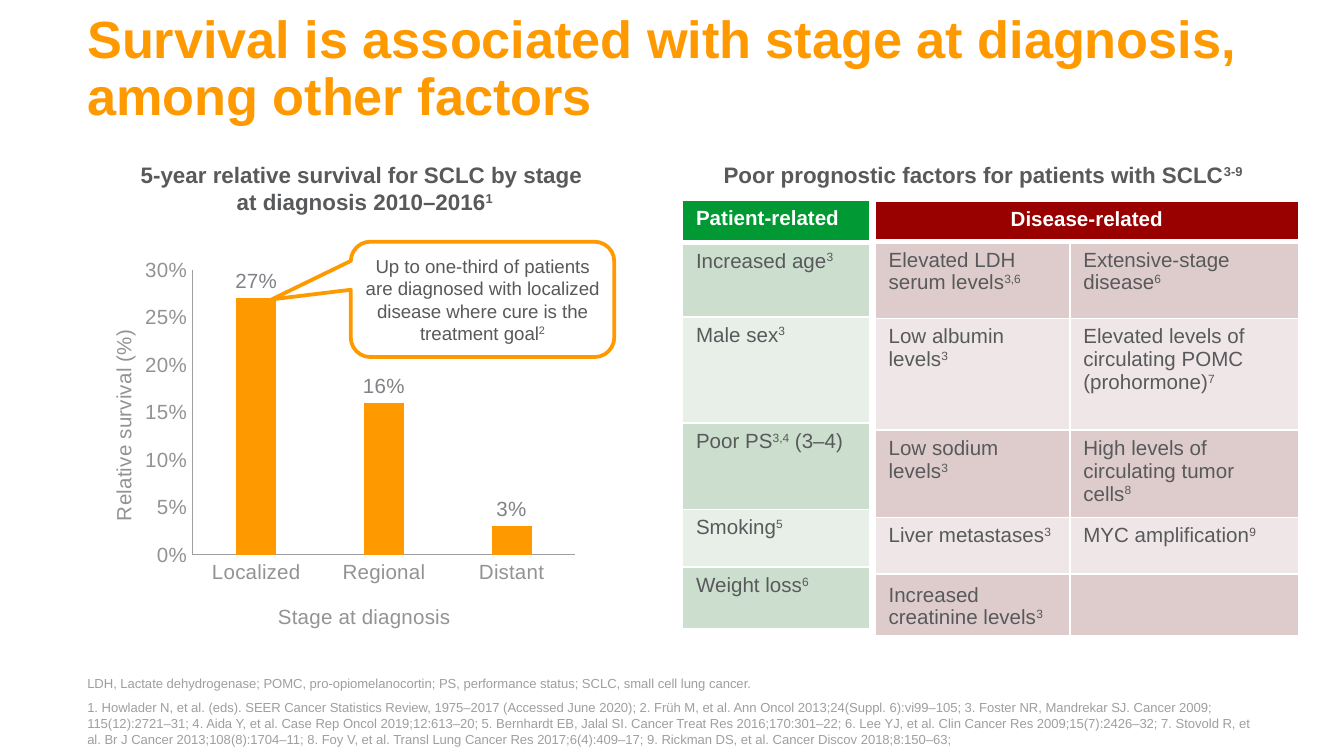
"""Build a slide on survival by stage and prognostic factors in SCLC."""
from lxml import etree
from pptx import Presentation
from pptx import util as u
from pptx.chart.data import CategoryChartData
from pptx.dml.color import RGBColor
from pptx.enum import chart as ch, shapes, text
from pptx.oxml import parse_xml
from pptx.oxml.ns import nsdecls, qn

ORANGE = RGBColor(0xFF, 0x99, 0x00)
DARK = RGBColor(0x58, 0x59, 0x5B)
LABEL = RGBColor(0x81, 0x82, 0x85)
AXIS = RGBColor(0x92, 0x93, 0x95)
PALE = RGBColor(0x9E, 0x9F, 0xA2)
WHITE = RGBColor(0xFF, 0xFF, 0xFF)
RED = RGBColor(0x99, 0x00, 0x00)
RED_BANDS = RGBColor(0xDE, 0xCC, 0xCC), RGBColor(0xEF, 0xE7, 0xE7)
GREEN = RGBColor(0x00, 0x99, 0x33)
GREEN_BANDS = RGBColor(0xCC, 0xDE, 0xCE), RGBColor(0xE7, 0xEF, 0xE8)

REFERENCES = (
    "1. Howlader N, et al. (eds). SEER Cancer Statistics Review, 1975–2017 (Accessed June 2020); "
    "2. Früh M, et al. Ann Oncol 2013;24(Suppl. 6):vi99–105; "
    "3. Foster NR, Mandrekar SJ. Cancer 2009; 115(12):2721–31; "
    "4. Aida Y, et al. Case Rep Oncol 2019;12:613–20; "
    "5. Bernhardt EB, Jalal SI. Cancer Treat Res 2016;170:301–22; "
    "6. Lee YJ, et al. Clin Cancer Res 2009;15(7):2426–32; "
    "7. Stovold R, et al. Br J Cancer 2013;108(8):1704–11; "
    "8. Foy V, et al. Transl Lung Cancer Res 2017;6(4):409–17; "
    "9. Rickman DS, et al. Cancer Discov 2018;8:150–63;")
ABBREVIATIONS = ("LDH, Lactate dehydrogenase; POMC, pro-opiomelanocortin; "
                 "PS, performance status; SCLC, small cell lung cancer.")
DISEASE = [
    ["Disease-related", ""],
    ["Elevated LDH serum levels^3,6", "Extensive-stage disease^6"],
    ["Low albumin levels^3", "Elevated levels of circulating POMC (prohormone)^7"],
    ["Low sodium levels^3", "High levels of circulating tumor cells^8"],
    ["Liver metastases^3", "MYC amplification^9"],
    ["Increased creatinine levels^3", ""],
]
PATIENT = [["Patient-related"], ["Increased age^3"], ["Male sex^3"],
           ["Poor PS^3,4^ (3–4)"], ["Smoking^5"], ["Weight loss^6"]]


def style_font(font, size, color, bold=False):
    """Apply the slide's typeface with a size, colour and weight."""
    font.name, font.size, font.bold = "Arial", u.Pt(size), bold
    font.color.rgb = color


def write(tf, marked, size, color, bold=False, align=text.PP_ALIGN.LEFT):
    """Write one paragraph, raising every second part between carets."""
    p = tf.paragraphs[0]
    first, *rest = marked.split("^")
    p.text = first
    for i, part in enumerate(rest):
        r = p.add_run()
        r.text = part
        if i % 2 == 0:
            r.font._element.set("baseline", "30000")
    p.alignment = align
    style_font(p.font, size, color, bold)
    return p


def set_frame(tf, margin, anchor=text.MSO_ANCHOR.TOP):
    """Set wrapping, equal margins and the anchor of a text frame."""
    tf.word_wrap = True
    tf.auto_size = text.MSO_AUTO_SIZE.NONE
    tf.vertical_anchor = anchor
    tf.margin_left = tf.margin_top = tf.margin_right = tf.margin_bottom = u.Cm(margin)


def add_title(slide, words, box):
    """Place and fill the title placeholder."""
    sp = slide.shapes.title
    sp.left, sp.top, sp.width, sp.height = map(u.Cm, box)
    set_frame(sp.text_frame, 0, text.MSO_ANCHOR.BOTTOM)
    write(sp.text_frame, words, 28, ORANGE, True).line_spacing = 0.9


def add_text(slide, words, box, size, color, margin=0, anchor=text.MSO_ANCHOR.TOP, **look):
    """Add a wrapped text box."""
    sp = slide.shapes.add_textbox(*map(u.Cm, box))
    set_frame(sp.text_frame, margin, anchor)
    write(sp.text_frame, words, size, color, **look)


def add_callout(slide, words, box):
    """Add the outlined speech bubble pointing at the first column."""
    sp = slide.shapes.add_shape(shapes.MSO_SHAPE.ROUNDED_RECTANGULAR_CALLOUT, *map(u.Cm, box))
    for i, value in enumerate((-0.8, 0, 0.17)):
        sp.adjustments[i] = value
    sp.shadow.inherit = False
    sp.fill.background()
    sp.line.color.rgb = ORANGE
    sp.line.width = u.Pt(2)
    set_frame(sp.text_frame, 0.13, text.MSO_ANCHOR.MIDDLE)
    write(sp.text_frame, words, 10, DARK, align=text.PP_ALIGN.CENTER)


def set_borders(cell, bottom):
    """Draw white cell borders with a given bottom width in points."""
    tc_pr = cell._tc.get_or_add_tcPr()
    for side, width in zip("LRTB", (1, 1, 1, bottom)):
        ln = etree.SubElement(tc_pr, qn(f"a:ln{side}"), w=str(u.Pt(width)))
        fill = etree.SubElement(ln, qn("a:solidFill"))
        etree.SubElement(fill, qn("a:srgbClr"), val=str(WHITE))


def add_factor_table(slide, rows, left, top, widths, heights, head, bands):
    """Add a table with one header row and alternating body rows."""
    frame = slide.shapes.add_table(len(rows), len(widths), u.Cm(left), u.Cm(top),
                                   u.Cm(sum(widths)), u.Cm(sum(heights)))
    table = frame.table
    table.first_row = table.horz_banding = False
    for column, width in zip(table.columns, widths):
        column.width = u.Cm(width)
    for i, (row, height) in enumerate(zip(rows, heights)):
        table.rows[i].height = u.Cm(height)
        for j, words in enumerate(row):
            cell = table.cell(i, j)
            set_borders(cell, 1 if i else 3)
            cell.fill.solid()
            cell.fill.fore_color.rgb = bands[(i - 1) % 2] if i else head
            write(cell.text_frame, words, 11, DARK if i else WHITE, bold=not i)
    return table


def set_layout(parent, position, **values):
    """Give a chart part a manual layout in fractions of the chart."""
    for old in parent.findall(qn("c:layout")):
        parent.remove(old)
    inner = '<c:layoutTarget val="inner"/>' if "w" in values else ""
    modes = '<c:xMode val="edge"/><c:yMode val="edge"/>'
    sizes = "".join(f'<c:{k} val="{v}"/>' for k, v in values.items())
    parent.insert(position, parse_xml(
        f'<c:layout {nsdecls("c")}><c:manualLayout>{inner}{modes}{sizes}</c:manualLayout></c:layout>'))


def style_axis(axis, title, x, y):
    """Format an axis and place its title."""
    axis.has_major_gridlines = False
    axis.major_tick_mark = axis.minor_tick_mark = ch.XL_TICK_MARK.NONE
    axis.format.line.color.rgb = PALE
    axis.format.line.width = u.Pt(0.75)
    style_font(axis.tick_labels.font, 11, AXIS)
    write(axis.axis_title.text_frame, title, 11, AXIS, align=text.PP_ALIGN.CENTER)
    set_layout(axis.axis_title._element, 1, x=x, y=y)


def add_survival_chart(slide, box):
    """Add the column chart of survival by stage."""
    data = CategoryChartData(number_format="0%")
    data.categories = ["Localized", "Regional", "Distant"]
    data.add_series("Series 1", (0.27, 0.16, 0.03))
    chart = slide.shapes.add_chart(ch.XL_CHART_TYPE.COLUMN_CLUSTERED, *map(u.Cm, box), data).chart
    chart.has_legend = chart.has_title = False
    style_font(chart.font, 10, DARK)
    style_axis(chart.category_axis, "Stage at diagnosis", 0.39, 0.87)
    axis = chart.value_axis
    style_axis(axis, "Relative survival (%)", 0.06, 0.19)
    axis.minimum_scale, axis.maximum_scale, axis.major_unit = 0, 0.3, 0.05
    axis.tick_labels.number_format = "0%"
    axis.tick_labels.number_format_is_linked = False
    plot = chart.plots[0]
    plot.gap_width, plot.overlap, plot.vary_by_categories = 219, -27, False
    series = plot.series[0]
    series.format.fill.solid()
    series.format.fill.fore_color.rgb = ORANGE
    labels = series.data_labels
    labels.show_value = True
    labels.position = ch.XL_LABEL_POSITION.OUTSIDE_END
    labels.number_format, labels.number_format_is_linked = "0%", False
    style_font(labels.font, 11, LABEL)
    set_layout(chart._chartSpace.chart.plotArea, 0, x=0.23, y=0.05, w=0.75, h=0.71)


def main():
    """Build and save the slide."""
    prs = Presentation()
    prs.slide_width, prs.slide_height = u.Cm(25.4), u.Cm(14.29)
    slide = prs.slides.add_slide(prs.slide_layouts[5])
    center = text.PP_ALIGN.CENTER
    add_title(slide, "Survival is associated with stage at diagnosis, among other factors",
              (1.65, 0.76, 22.48, 1.63))
    add_text(slide, REFERENCES, (1.65, 13.23, 22.15, 1.02), 7, PALE)
    add_text(slide, ABBREVIATIONS, (1.65, 12.22, 21.51, 0.84), 7, PALE,
             anchor=text.MSO_ANCHOR.BOTTOM)
    for words, box in (
            ("5-year relative survival for SCLC by stage \nat diagnosis 2010–2016^1",
             (1.47, 2.92, 10.85, 1.27)),
            ("Poor prognostic factors for patients with SCLC^3-9", (13.26, 2.92, 10.64, 0.76))):
        add_text(slide, words, box, 12, DARK, 0.13, bold=True, align=center)
    disease = add_factor_table(slide, DISEASE, 16.54, 3.81, (3.68, 4.32),
                               (0.76, 1.45, 2.11, 1.65, 1.07, 1.17), RED, RED_BANDS)
    disease.cell(0, 0).merge(disease.cell(0, 1))
    disease.cell(0, 0).text_frame.paragraphs[0].alignment = center
    disease.cell(5, 0).vertical_anchor = text.MSO_ANCHOR.BOTTOM
    add_survival_chart(slide, (1.42, 4.72, 9.65, 7.59))
    add_callout(slide, "Up to one-third of patients are diagnosed with localized disease "
                "where cure is the treatment goal^2", (6.63, 4.57, 4.98, 2.18))
    add_factor_table(slide, PATIENT, 12.9, 3.78, (3.53,),
                     (0.81, 1.4, 2.01, 1.63, 1.09, 1.17), GREEN, GREEN_BANDS)
    prs.save("out.pptx")


if __name__ == "__main__":
    main()
